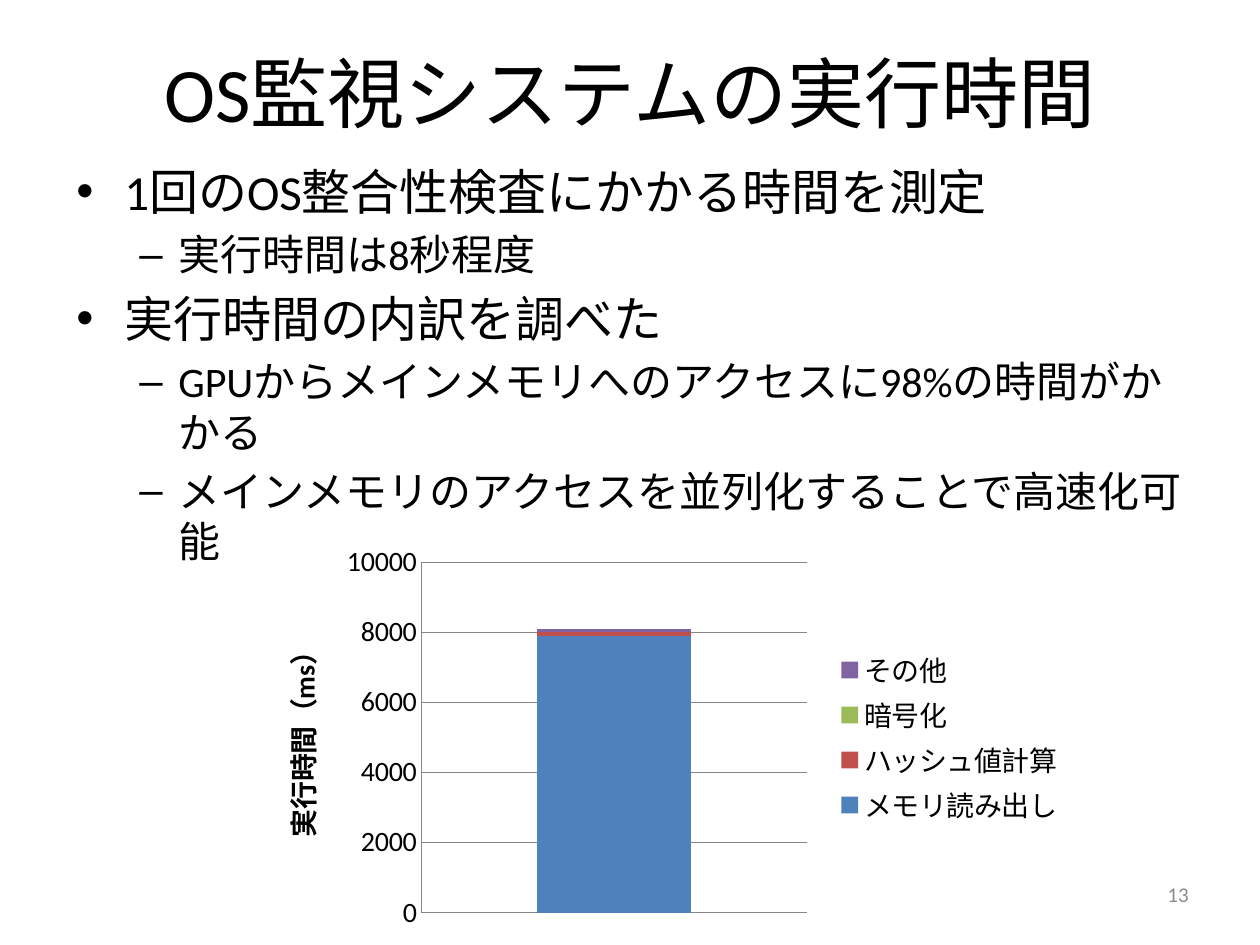
import pptx
import pptx.chart.data
import pptx.dml.color
import pptx.enum.chart
import pptx.enum.text
import pptx.oxml
import pptx.oxml.ns
import pptx.util

# Content
TITLE = "OS監視システムの実行時間"
PAGE_NUMBER = "13"
BULLETS = [
    (0, "1回のOS整合性検査にかかる時間を測定"),
    (1, "実行時間は8秒程度"),
    (0, "実行時間の内訳を調べた"),
    (1, "GPUからメインメモリへのアクセスに98%の時間がかかる"),
    (1, "メインメモリのアクセスを並列化することで高速化可能"),
]
AXIS_TITLE = "実行時間（ms）"
SERIES = [
    ("メモリ読み出し", 7900, "4F81BD"),
    ("ハッシュ値計算", 100, "C0504D"),
    ("暗号化", 0, "9BBB59"),
    ("その他", 100, "8064A2"),
]

# Places in px: left, top, width, height
PX_PER_INCH = 126
TITLE_BOX = (63, 38, 1134, 107)
BODY_BOX = (64, 155, 1132, 684)
NUMBER_BOX = (907, 869, 294, 50)
CHART_BOX = (273, 534, 804, 407)
PLOT_AREA = {"x": 0.185, "y": 0.07, "w": 0.479, "h": 0.861}  # share of the chart

THEME = {
    "font": "Calibri", "text": "000000", "muted": "8C8C8C", "line": "868686",
    "title": 44, "number": 12, "chart": 16,
}
LEVELS = [  # size in points, text indent and hanging in px
    {"size": 28, "bullet": "•", "left": 48, "hanging": 48},
    {"size": 24, "bullet": "–", "left": 102, "hanging": 39},
]

ALIGN = pptx.enum.text.PP_ALIGN
MIDDLE = pptx.enum.text.MSO_ANCHOR.MIDDLE


def px(value):
    return pptx.util.Emu(round(value * 914400 / PX_PER_INCH))


def box(places):
    return [px(value) for value in places]


def color(code):
    return pptx.dml.color.RGBColor.from_string(code)


def format_font(font, size, code=THEME["text"], bold=False):
    font.name = THEME["font"]
    font.size = pptx.util.Pt(size)
    font.bold = bold
    font.color.rgb = color(code)


def write(paragraph, text, size, code=THEME["text"], align=ALIGN.LEFT, bold=False):
    run = paragraph.add_run()
    run.text = text
    format_font(run.font, size, code, bold)
    paragraph.alignment = align


def add_bullet(paragraph, level):
    properties = paragraph._p.get_or_add_pPr()
    properties.set("marL", str(px(level["left"])))
    properties.set("indent", str(-px(level["hanging"])))
    paragraph.space_before = pptx.util.Pt(level["size"] * 0.2)
    namespace = pptx.oxml.ns.nsdecls("a")
    for tag in ('buFont {} typeface="Arial"', f'buChar {{}} char="{level["bullet"]}"'):
        properties.append(pptx.oxml.parse_xml(f"<a:{tag.format(namespace)}/>"))


def add_text_frame(slide, places):
    frame = slide.shapes.add_textbox(*box(places)).text_frame
    frame.word_wrap = True
    return frame


def add_time_chart(slide):
    data = pptx.chart.data.CategoryChartData()
    data.categories = ["1"]
    for name, value, _ in SERIES:
        data.add_series(name, [value])
    kind = pptx.enum.chart.XL_CHART_TYPE.COLUMN_STACKED
    chart = slide.shapes.add_chart(kind, *box(CHART_BOX), data).chart
    format_font(chart.font, THEME["chart"])
    chart.has_title = False

    # Columns
    plot = chart.plots[0]
    plot.gap_width, plot.overlap = 150, 100
    plot.vary_by_categories = False
    for series, (_, _, code) in zip(plot.series, SERIES):
        series.format.fill.solid()
        series.format.fill.fore_color.rgb = color(code)

    # Axes
    chart.category_axis.visible = False
    axis = chart.value_axis
    axis.minimum_scale, axis.maximum_scale, axis.major_unit = 0, 10000, 2000
    axis.major_tick_mark = pptx.enum.chart.XL_TICK_MARK.NONE
    axis.tick_labels.number_format = "General"
    axis.tick_labels.number_format_is_linked = False
    format_font(axis.tick_labels.font, THEME["chart"])
    for line in (axis.format.line, axis.major_gridlines.format.line):
        line.color.rgb = color(THEME["line"])
        line.width = pptx.util.Pt(0.75)
    write(axis.axis_title.text_frame.paragraphs[0], AXIS_TITLE,
          THEME["chart"], align=ALIGN.CENTER, bold=True)

    # Legend
    chart.has_legend = True
    chart.legend.position = pptx.enum.chart.XL_LEGEND_POSITION.RIGHT
    chart.legend.include_in_layout = False
    format_font(chart.legend.font, THEME["chart"])

    # Fixed inner plot area
    plot_area = chart._chartSpace.chart.plotArea
    for old in plot_area.findall(pptx.oxml.ns.qn("c:layout")):
        plot_area.remove(old)
    settings = '<c:layoutTarget val="inner"/><c:xMode val="edge"/><c:yMode val="edge"/>'
    settings += "".join(f'<c:{key} val="{value}"/>' for key, value in PLOT_AREA.items())
    plot_area.insert(0, pptx.oxml.parse_xml(
        f'<c:layout {pptx.oxml.ns.nsdecls("c")}><c:manualLayout>{settings}'
        "</c:manualLayout></c:layout>"))


def main():
    presentation = pptx.Presentation()
    presentation.slide_width = px(1260)
    presentation.slide_height = px(945)
    slide = presentation.slides.add_slide(presentation.slide_layouts[5])

    # Title
    title = slide.shapes.title
    title.left, title.top, title.width, title.height = box(TITLE_BOX)
    title.text_frame.vertical_anchor = MIDDLE
    write(title.text_frame.paragraphs[0], TITLE, THEME["title"], align=ALIGN.CENTER)

    # Page number
    number = add_text_frame(slide, NUMBER_BOX)
    number.vertical_anchor = MIDDLE
    write(number.paragraphs[0], PAGE_NUMBER, THEME["number"], THEME["muted"], ALIGN.RIGHT)

    # Bullets
    body = add_text_frame(slide, BODY_BOX)
    for index, (depth, text) in enumerate(BULLETS):
        paragraph = body.add_paragraph() if index else body.paragraphs[0]
        paragraph.level = depth
        write(paragraph, text, LEVELS[depth]["size"])
        add_bullet(paragraph, LEVELS[depth])

    add_time_chart(slide)
    presentation.save("out.pptx")


if __name__ == "__main__":
    main()
